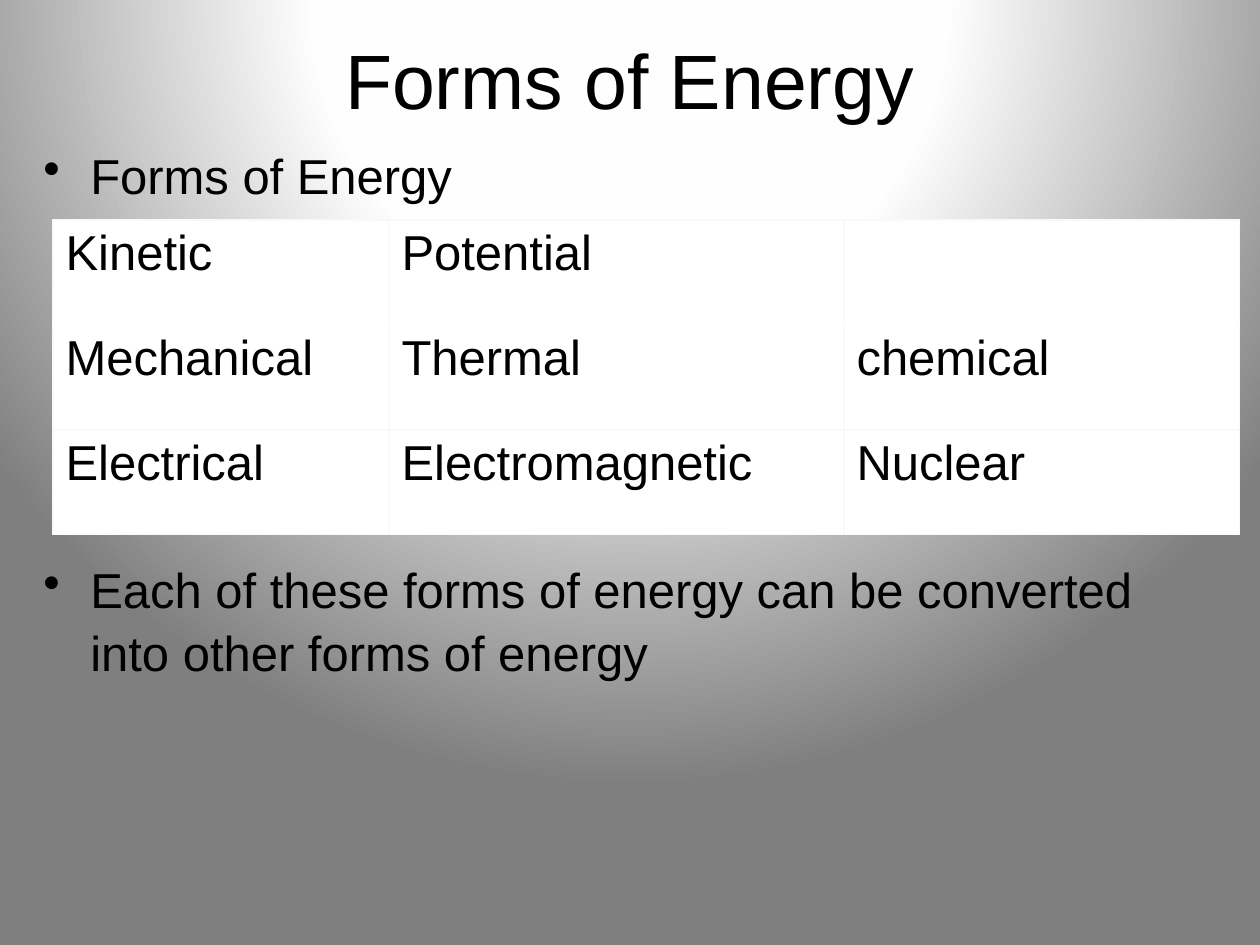
from dataclasses import dataclass

from lxml import etree
from pptx import Presentation
from pptx import util as u
from pptx.dml.color import RGBColor
from pptx.enum import text
from pptx.oxml import parse_xml
from pptx.oxml.ns import nsdecls, qn

PX_PER_INCH = 126


@dataclass(frozen=True)
class Theme:
    font: str = "Arial"
    ink: str = "000000"
    cell: str = "FFFFFF"
    grid: str = "F9F9F9"
    backdrop: tuple = ((0, "FFFFFF"), (40, "FEFEFE"), (100, "7F7F7F"))
    title_size: int = 44
    body_size: int = 28
    grid_width: float = 0.75
    header_rule_width: float = 2


THEME = Theme()
COLUMN_WIDTHS = (336, 455, 396)
ROW_HEIGHT = 105
ENERGY_FORMS = (
    ("Kinetic", "Potential", ""),
    ("Mechanical", "Thermal", "chemical"),
    ("Electrical", "Electromagnetic", "Nuclear"),
)


def px(length):
    return u.Emu(round(length * 914400 / PX_PER_INCH))


def style_paragraph(paragraph, size):
    for run in paragraph.runs:
        run.font.name = THEME.font
        run.font.size = u.Pt(size)
        run.font.bold = False
        run.font.color.rgb = RGBColor.from_string(THEME.ink)


def set_radial_background(slide):
    """Circular gradient centred above the slide's top edge."""
    slide.background.fill.solid()
    properties = slide.background._cSld.find(qn("p:bg")).find(qn("p:bgPr"))
    stops = "".join(
        f'<a:gs pos="{position * 1000}"><a:srgbClr val="{color}"/></a:gs>'
        for position, color in THEME.backdrop
    )
    gradient = parse_xml(
        f'<a:gradFill {nsdecls("a")} rotWithShape="1"><a:gsLst>{stops}</a:gsLst>'
        '<a:path path="circle"><a:fillToRect l="50000" t="-80000" r="50000" b="180000"/>'
        "</a:path></a:gradFill>"
    )
    properties.replace(properties.find(qn("a:solidFill")), gradient)


def add_text(slide, left, top, width, height, content):
    shape = slide.shapes.add_textbox(px(left), px(top), px(width), px(height))
    text_frame = shape.text_frame
    text_frame.word_wrap = True
    text_frame.text = content
    return text_frame


def add_title(slide, content):
    text_frame = add_text(slide, 63, 0, 1134, 158, content)
    text_frame.vertical_anchor = text.MSO_ANCHOR.MIDDLE
    paragraph = text_frame.paragraphs[0]
    paragraph.alignment = text.PP_ALIGN.CENTER
    style_paragraph(paragraph, THEME.title_size)


def add_bullets(slide, items, gap):
    """Bulleted paragraphs, with gap points left between them for the table."""
    text_frame = add_text(slide, 31, 136, 1197, 746, "\n".join(items))
    for index, paragraph in enumerate(text_frame.paragraphs):
        paragraph.line_spacing = 1.06
        paragraph.space_before = u.Pt(gap if index else 0)
        properties = paragraph._p.get_or_add_pPr()
        properties.set("marL", str(px(47)))
        properties.set("indent", str(-px(47)))
        etree.SubElement(properties, qn("a:buChar")).set("char", "•")
        style_paragraph(paragraph, THEME.body_size)


def set_border(cell, side, color, width):
    border = parse_xml(
        f'<a:{side} {nsdecls("a")} w="{u.Pt(width)}"><a:solidFill>'
        f'<a:srgbClr val="{color}"/></a:solidFill></a:{side}>'
    )
    cell._tc.get_or_add_tcPr().append(border)


def style_cell(cell, row):
    for side in ("lnL", "lnR", "lnT", "lnB"):
        if (row, side) in ((0, "lnB"), (1, "lnT")):
            set_border(cell, side, THEME.cell, THEME.header_rule_width)
        else:
            set_border(cell, side, THEME.grid, THEME.grid_width)
    cell.fill.solid()
    cell.fill.fore_color.rgb = RGBColor.from_string(THEME.cell)
    style_paragraph(cell.text_frame.paragraphs[0], THEME.body_size)


def add_energy_table(slide):
    frame = slide.shapes.add_table(
        len(ENERGY_FORMS), len(COLUMN_WIDTHS), px(53), px(220),
        px(sum(COLUMN_WIDTHS)), px(ROW_HEIGHT * len(ENERGY_FORMS)),
    )
    table = frame.table
    table.first_row = table.horz_banding = False
    for column, width in zip(table.columns, COLUMN_WIDTHS):
        column.width = px(width)
    for row, names in enumerate(ENERGY_FORMS):
        table.rows[row].height = px(ROW_HEIGHT)
        for column, name in enumerate(names):
            cell = table.cell(row, column)
            if name:
                cell.text_frame.text = name
            style_cell(cell, row)


def main():
    presentation = Presentation()
    presentation.slide_width = u.Inches(10)
    presentation.slide_height = u.Inches(7.5)
    slide = presentation.slides.add_slide(presentation.slide_layouts[6])
    set_radial_background(slide)
    add_title(slide, "Forms of Energy")
    add_bullets(slide, (
        "Forms of Energy",
        "Each of these forms of energy can be converted into other forms of energy",
    ), gap=201)
    add_energy_table(slide)
    presentation.save("out.pptx")


if __name__ == "__main__":
    main()
